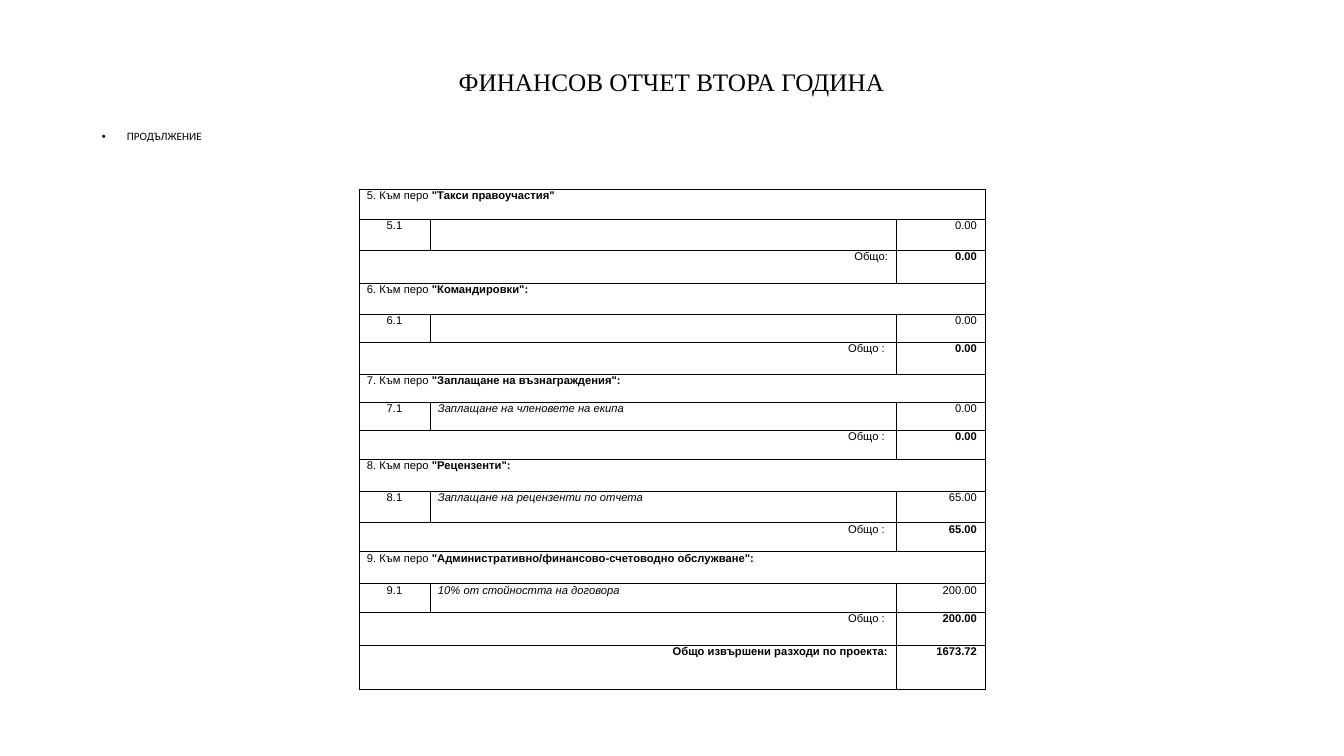
from dataclasses import dataclass

from lxml import etree
from pptx import Presentation
from pptx import util as u
from pptx.dml.color import RGBColor
from pptx.enum import text
from pptx.oxml import ns


@dataclass(frozen=True)
class Theme:
    ink: RGBColor = RGBColor(0, 0, 0)
    title_font: str = "Times New Roman"
    body_font: str = "Calibri"
    table_font: str = "Arial"
    title_size: int = 18
    small_size: int = 8
    thin_line: float = 0.5
    thick_line: float = 1


THEME = Theme()
LEFT, CENTER, RIGHT = text.PP_ALIGN.LEFT, text.PP_ALIGN.CENTER, text.PP_ALIGN.RIGHT

COLUMN_WIDTHS = [71, 466, 89]
ROW_HEIGHTS = [30, 31, 33, 31, 28, 32, 28, 28, 29, 32, 32, 29, 32, 29, 33, 44]

# number, budget item, description, amount, label of the total
SECTIONS = [
    (5, '"Такси правоучастия"', "", "0.00", "Общо:"),
    (6, '"Командировки":', "", "0.00", "Общо : "),
    (7, '"Заплащане на възнаграждения":', "Заплащане на членовете на екипа", "0.00", "Общо : "),
    (8, '"Рецензенти":', "Заплащане на рецензенти по отчета", "65.00", "Общо : "),
    (9, '"Административно/финансово-счетоводно обслужване":',
     "10% от стойността на договора", "200.00", "Общо : "),
]


def px(count):
    return u.Emu(round(count * 914400 / 100.8))


def format_run(run, font, size, bold=False, italic=False):
    run.font.name = font
    run.font.size = u.Pt(size)
    run.font.bold = bold
    run.font.italic = italic
    run.font.color.rgb = THEME.ink


def add_text(slide, box, wording, font, size):
    """Add a wrapped one-paragraph text box and return its shape."""
    shape = slide.shapes.add_textbox(*map(px, box))
    shape.text_frame.word_wrap = True
    paragraph = shape.text_frame.paragraphs[0]
    paragraph.text = wording
    paragraph.line_spacing = 0.9
    format_run(paragraph.runs[0], font, size)
    return shape


def add_bullet(paragraph, indent):
    properties = paragraph._p.get_or_add_pPr()
    properties.set("marL", str(px(indent)))
    properties.set("indent", str(-px(indent)))
    font = etree.SubElement(properties, ns.qn("a:buFont"))
    font.set("typeface", "Arial")
    etree.SubElement(properties, ns.qn("a:buChar")).set("char", "•")


def set_borders(cell, top, bottom):
    properties = cell._tc.get_or_add_tcPr()
    sides = {"L": THEME.thin_line, "R": THEME.thin_line, "T": top, "B": bottom}
    for side, width in sides.items():
        line = etree.SubElement(properties, ns.qn(f"a:ln{side}"))
        line.set("w", str(u.Pt(width)))
        fill = etree.SubElement(line, ns.qn("a:solidFill"))
        etree.SubElement(fill, ns.qn("a:srgbClr")).set("val", str(THEME.ink))


def prepare_cell(cell, top, bottom):
    set_borders(cell, top, bottom)
    cell.fill.background()
    cell.margin_left = cell.margin_right = px(8)
    cell.margin_top = cell.margin_bottom = 0
    # An empty cell takes its height from the end-of-paragraph size.
    end = etree.SubElement(cell.text_frame.paragraphs[0]._p, ns.qn("a:endParaRPr"))
    end.set("sz", str(THEME.small_size * 100))


def write_cell(cell, *parts, align=LEFT, italic=False):
    """Write (wording, bold) parts as runs of the cell's only paragraph."""
    paragraph = cell.text_frame.paragraphs[0]
    paragraph.alignment = align
    for wording, bold in parts:
        run = paragraph.add_run()
        run.text = wording
        format_run(run, THEME.table_font, THEME.small_size, bold, italic)


def write_total(table, row, label, amount, bold_label=False):
    table.cell(row, 0).merge(table.cell(row, 1))
    write_cell(table.cell(row, 0), (label, bold_label), align=RIGHT)
    write_cell(table.cell(row, 2), (amount, True), align=RIGHT)


def write_section(table, row, number, item, description, amount, label):
    table.cell(row, 0).merge(table.cell(row, 2))
    write_cell(table.cell(row, 0), (f"{number}. Към перо ", False), (item, True))
    write_cell(table.cell(row + 1, 0), (f"{number}.1", False), align=CENTER)
    if description:
        write_cell(table.cell(row + 1, 1), (description, False), italic=True)
    write_cell(table.cell(row + 1, 2), (amount, False), align=RIGHT)
    write_total(table, row + 2, label, amount)


def add_expense_table(slide):
    frame = slide.shapes.add_table(
        len(ROW_HEIGHTS), len(COLUMN_WIDTHS), px(359), px(189),
        px(sum(COLUMN_WIDTHS)), px(sum(ROW_HEIGHTS)))
    table = frame.table
    table.first_row = table.horz_banding = False
    for column, width in zip(table.columns, COLUMN_WIDTHS):
        column.width = px(width)
    last = len(ROW_HEIGHTS) - 1
    for index, (row, height) in enumerate(zip(table.rows, ROW_HEIGHTS)):
        row.height = px(height)
        top = THEME.thick_line if index == last else THEME.thin_line
        bottom = THEME.thick_line if index == last - 1 else THEME.thin_line
        for cell in row.cells:
            prepare_cell(cell, top, bottom)
    for index, section in enumerate(SECTIONS):
        write_section(table, index * 3, *section)
    write_total(table, last, "Общо извършени разходи по проекта:", "1673.72", bold_label=True)


def main():
    presentation = Presentation()
    presentation.slide_width, presentation.slide_height = px(1344), px(756)
    slide = presentation.slides.add_slide(presentation.slide_layouts[6])

    title = add_text(slide, (92, 40, 1159, 86), "ФИНАНСОВ ОТЧЕТ ВТОРА ГОДИНА",
                     THEME.title_font, THEME.title_size)
    title.text_frame.vertical_anchor = text.MSO_ANCHOR.MIDDLE
    title.text_frame.paragraphs[0].alignment = CENTER

    body = add_text(slide, (92, 126, 1159, 590), "ПРОДЪЛЖЕНИЕ",
                    THEME.body_font, THEME.small_size)
    continuation = body.text_frame.paragraphs[0]
    continuation.space_before = u.Pt(10)
    add_bullet(continuation, 25)

    add_expense_table(slide)
    presentation.save("out.pptx")


if __name__ == "__main__":
    main()
